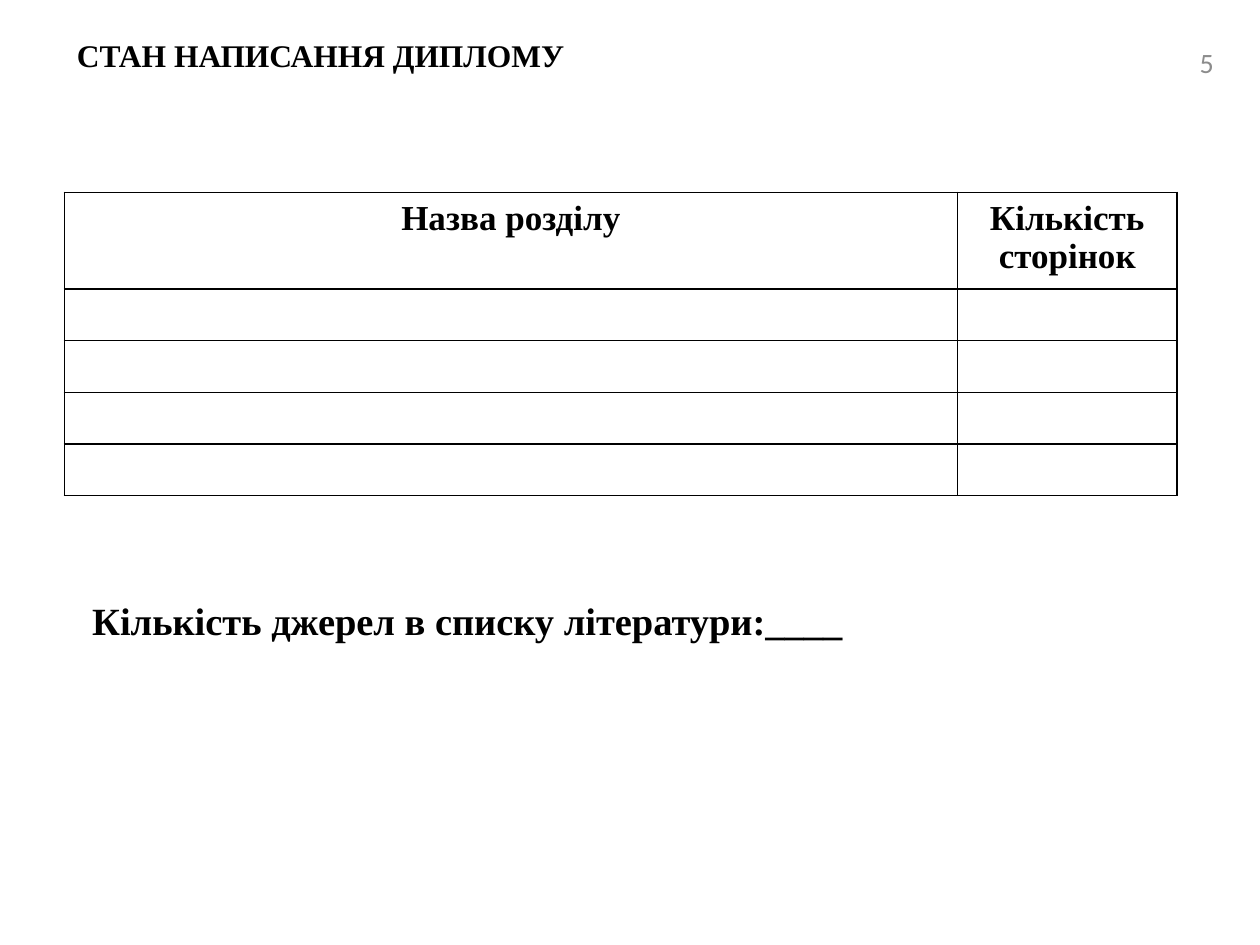
from lxml.etree import SubElement
from pptx import Presentation
from pptx.dml.color import RGBColor
from pptx.enum.text import MSO_ANCHOR, PP_ALIGN
from pptx.oxml.ns import qn
from pptx.util import Cm, Pt

BLANK_LAYOUT = 6


def color(hex_string):
    return RGBColor.from_string(hex_string)


class SlideBuilder:
    ink = "000000"
    muted = "8C8C8C"
    heading_font = "Times New Roman"
    number_font = "Calibri"
    border_width = Pt(1)

    def __init__(self, slide):
        self.slide = slide

    def style(self, para, size, align, font=heading_font, ink=ink, bold=True):
        para.alignment = align
        para.font.name = font
        para.font.size = Pt(size)
        para.font.bold = bold
        para.font.color.rgb = color(ink)

    def text(self, text, left, top, width, height, size, align=PP_ALIGN.LEFT,
             anchor=MSO_ANCHOR.MIDDLE, **font_style):
        """Add a one-paragraph text box and return its paragraph."""
        box = self.slide.shapes.add_textbox(Cm(left), Cm(top), Cm(width), Cm(height))
        frame = box.text_frame
        frame.word_wrap = True
        frame.vertical_anchor = anchor
        para = frame.paragraphs[0]
        para.text = text
        self.style(para, size, align, **font_style)
        return para

    def table(self, headers, blank_rows, left, top, column_widths, row_height):
        """Add a ruled table with a header row and empty rows to fill in."""
        row_count = blank_rows + 1
        table = self.slide.shapes.add_table(
            row_count, len(headers), Cm(left), Cm(top),
            Cm(sum(column_widths)), Cm(row_height * row_count)).table
        table.first_row = table.horz_banding = False
        for column, width in zip(table.columns, column_widths):
            column.width = Cm(width)
        for row in table.rows:
            row.height = Cm(row_height)
        for cell in table.iter_cells():
            self.border(cell)
            cell.fill.background()
        for index, header in enumerate(headers):
            para = table.cell(0, index).text_frame.paragraphs[0]
            para.text = header
            self.style(para, 20, PP_ALIGN.CENTER)

    def border(self, cell):
        properties = cell._tc.get_or_add_tcPr()
        for side in ("a:lnL", "a:lnR", "a:lnT", "a:lnB"):
            line = SubElement(properties, qn(side), w=str(self.border_width))
            fill = SubElement(line, qn("a:solidFill"))
            SubElement(fill, qn("a:srgbClr"), val=self.ink)


def main():
    deck = Presentation()
    deck.slide_width, deck.slide_height = Cm(25.4), Cm(19.05)
    page = SlideBuilder(deck.slides.add_slide(deck.slide_layouts[BLANK_LAYOUT]))

    page.text("5", 23.72, 0.74, 1, 1.02, 16, PP_ALIGN.RIGHT,
              font=page.number_font, ink=page.muted, bold=False)
    title = page.text("СТАН НАПИСАННЯ ДИПЛОМУ", 1.3, 0.71, 22.33, 0.89, 18)
    title.line_spacing = 0.9

    page.table(["Назва розділу", "Кількість сторінок"], blank_rows=4,
               left=1.3, top=3.88, column_widths=[18, 4.43], row_height=1.04)

    sources = page.text("Кількість джерел в списку літератури:____",
                        0.61, 11.91, 24.2, 1.2, 22, PP_ALIGN.JUSTIFY, MSO_ANCHOR.TOP)
    sources._p.get_or_add_pPr().set("marL", str(Cm(1)))

    deck.save("out.pptx")


if __name__ == "__main__":
    main()
